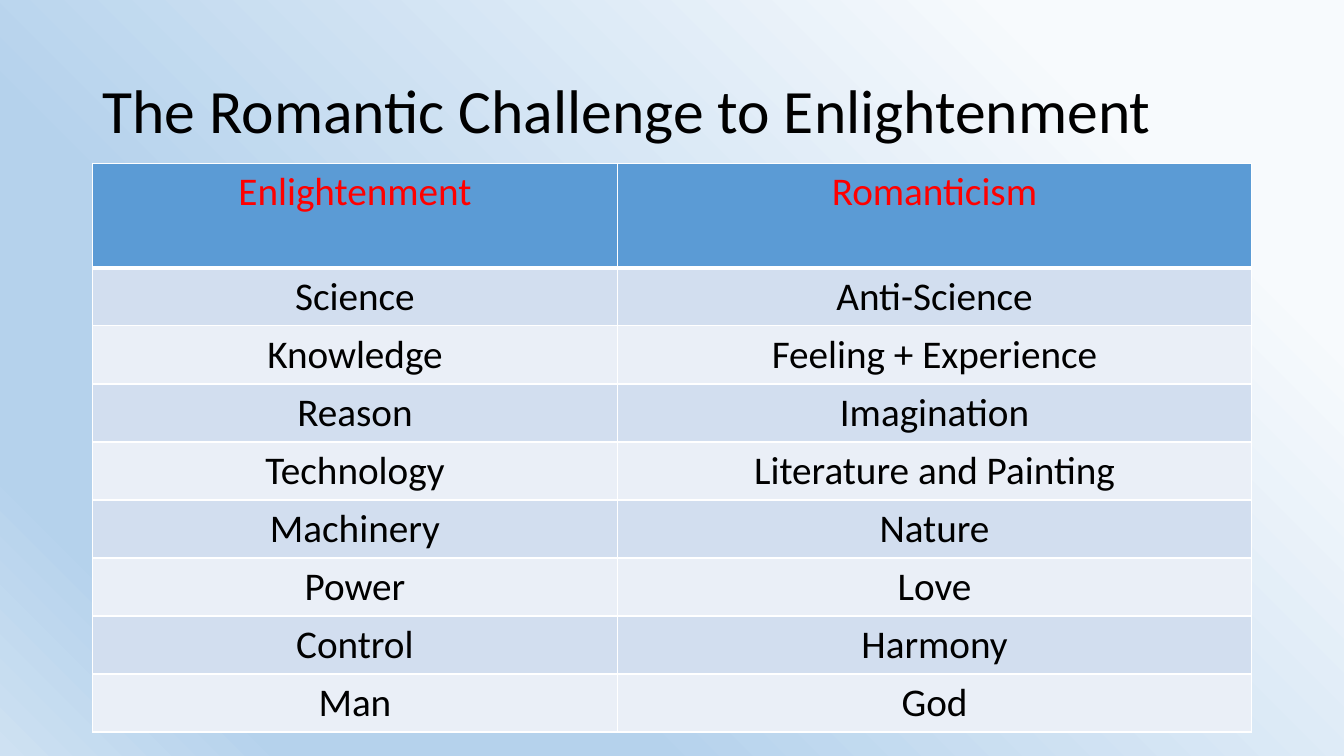
from lxml import etree
from pptx import Presentation
from pptx.dml.color import RGBColor
from pptx.enum import text
from pptx.oxml import ns, parse_xml
from pptx.util import Cm, Pt

FONT = "Calibri"
BLACK, WHITE, RED = "000000", "FFFFFF", "FF0000"
HEADER_FILL, BAND_FILLS = "5B9BD5", ("D2DEEF", "EAEFF7")
BACKGROUND_STOPS = ((16, "F7FAFD"), (69, "B5D2EC"), (86, "B5D2EC"), (100, "CEE1F2"))
BACKGROUND_ANGLE = 135
COLUMN_WIDTHS = (13.23, 15.98)
HEADER_HEIGHT, ROW_HEIGHT = 2.64, 1.46
ROWS = (
    ("Enlightenment", "Romanticism"),
    ("Science", "Anti-Science"),
    ("Knowledge", "Feeling + Experience"),
    ("Reason", "Imagination"),
    ("Technology", "Literature and Painting"),
    ("Machinery", "Nature"),
    ("Power", "Love"),
    ("Control", "Harmony"),
    ("Man", "God"),
)


def rgb(value):
    return RGBColor.from_string(value)


def set_attributes(target, values):
    for name, value in values.items():
        setattr(target, name, value)


def write_text(frame, content, size, color, alignment, line_spacing=1.0):
    paragraph = frame.paragraphs[0]
    set_attributes(paragraph, {"alignment": alignment, "line_spacing": line_spacing})
    run = paragraph.add_run()
    run.text = content
    set_attributes(run.font, {"name": FONT, "size": Pt(size), "bold": False})
    run.font.color.rgb = rgb(color)


def set_background(slide, stops, angle):
    """Fill the slide with a linear gradient of several stops."""
    stop_xml = "".join(
        f'<a:gs pos="{position * 1000}"><a:srgbClr val="{color}"/></a:gs>'
        for position, color in stops
    )
    background = parse_xml(
        f'<p:bg {ns.nsdecls("p", "a")}><p:bgPr><a:gradFill rotWithShape="1">'
        f'<a:gsLst>{stop_xml}</a:gsLst><a:lin ang="{angle * 60000}" scaled="0"/>'
        "</a:gradFill><a:effectLst/></p:bgPr></p:bg>"
    )
    slide.element.cSld.insert(0, background)


def set_title(slide, content):
    title = slide.shapes.title
    set_attributes(title, {"left": Cm(2.33), "top": Cm(1.01),
                           "width": Cm(29.21), "height": Cm(3.68)})
    set_attributes(title.text_frame, {"vertical_anchor": text.MSO_ANCHOR.MIDDLE,
                                      "auto_size": text.MSO_AUTO_SIZE.NONE,
                                      "word_wrap": True})
    write_text(title.text_frame, content, 44, BLACK, text.PP_ALIGN.LEFT, 0.9)


def add_borders(cell, widths):
    """Draw white borders; widths maps a side (L, R, T, B) to points."""
    properties = cell._tc.get_or_add_tcPr()
    for side, width in widths.items():
        line = etree.SubElement(properties, ns.qn(f"a:ln{side}"), w=str(Pt(width)))
        fill = etree.SubElement(line, ns.qn("a:solidFill"))
        etree.SubElement(fill, ns.qn("a:srgbClr"), val=WHITE)


def format_cell(cell, content, fill, color, bottom_width):
    add_borders(cell, {"L": 1, "R": 1, "T": 1, "B": bottom_width})
    cell.fill.solid()
    cell.fill.fore_color.rgb = rgb(fill)
    write_text(cell.text_frame, content, 28, color, text.PP_ALIGN.CENTER)


def add_comparison_table(slide, rows):
    height = HEADER_HEIGHT + ROW_HEIGHT * (len(rows) - 1)
    table = slide.shapes.add_table(
        len(rows), len(COLUMN_WIDTHS), Cm(2.33), Cm(4.11),
        Cm(sum(COLUMN_WIDTHS)), Cm(height),
    ).table
    for column, width in zip(table.columns, COLUMN_WIDTHS):
        column.width = Cm(width)
    for index, entries in enumerate(rows):
        is_header = index == 0
        table.rows[index].height = Cm(HEADER_HEIGHT if is_header else ROW_HEIGHT)
        fill = HEADER_FILL if is_header else BAND_FILLS[(index - 1) % 2]
        color = RED if is_header else BLACK
        for cell, content in zip(table.rows[index].cells, entries):
            format_cell(cell, content, fill, color, 3 if is_header else 1)


def main():
    presentation = Presentation()
    set_attributes(presentation, {"slide_width": Cm(33.87), "slide_height": Cm(19.05)})
    slide = presentation.slides.add_slide(presentation.slide_layouts[5])
    set_background(slide, BACKGROUND_STOPS, BACKGROUND_ANGLE)
    set_title(slide, "The Romantic Challenge to Enlightenment")
    add_comparison_table(slide, ROWS)
    presentation.save("out.pptx")


if __name__ == "__main__":
    main()
